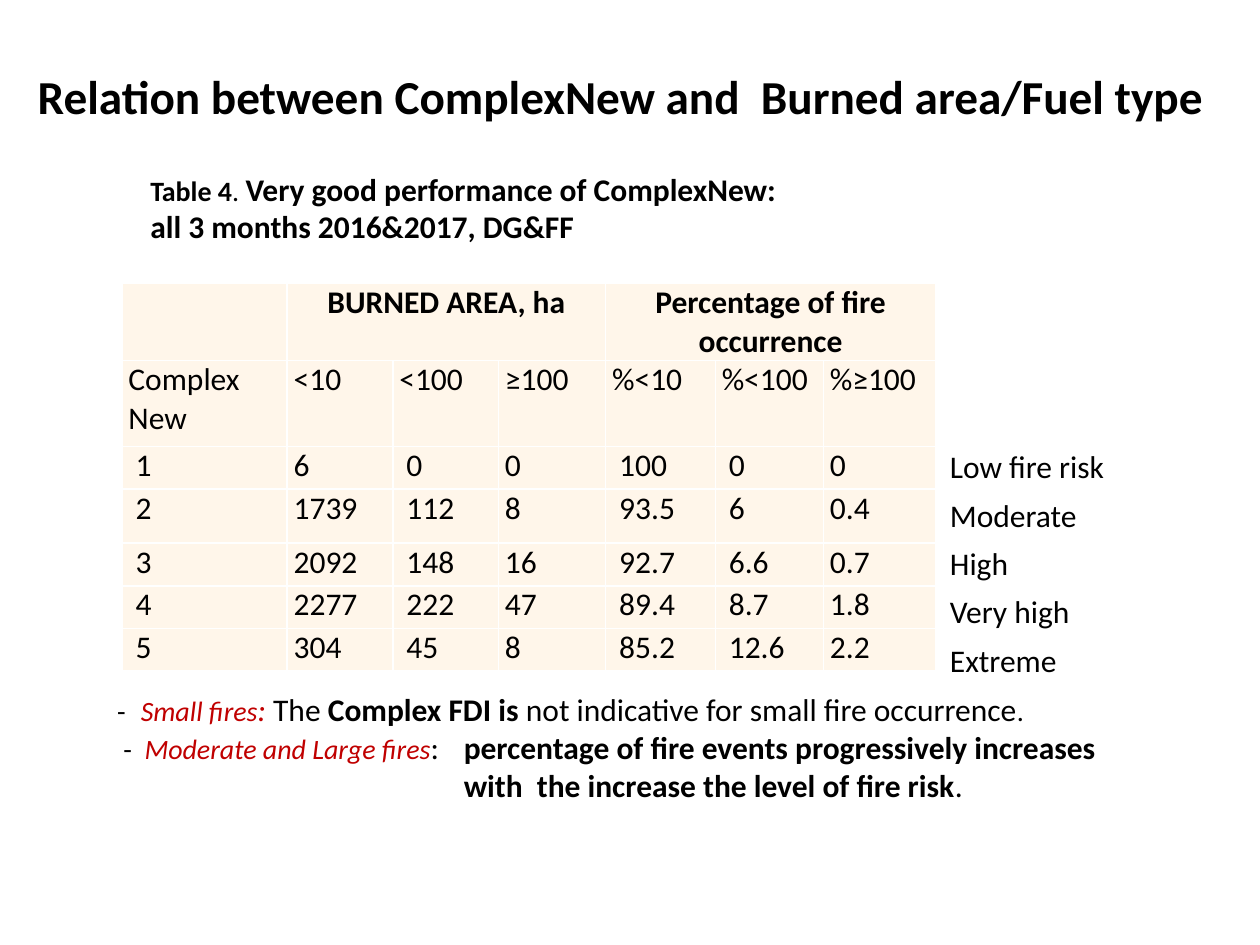
from dataclasses import dataclass

from lxml.etree import SubElement
from pptx import Presentation
from pptx.dml.color import RGBColor
from pptx.enum.text import MSO_ANCHOR, MSO_AUTO_SIZE, PP_ALIGN
from pptx.oxml.ns import qn
from pptx.slide import Slide
from pptx.table import _Cell
from pptx.text.text import TextFrame
from pptx.util import Cm, Pt

BLACK = RGBColor(0x00, 0x00, 0x00)
RED = RGBColor(0xC0, 0x00, 0x00)
CREAM = RGBColor(0xFF, 0xF6, 0xEA)
WHITE = RGBColor(0xFF, 0xFF, 0xFF)
FONT = "Calibri"


@dataclass(frozen=True)
class TextRun:
    text: str
    size: float = 18
    bold: bool = False
    italic: bool = False
    color: RGBColor = BLACK


@dataclass(frozen=True)
class TextLine:
    runs: tuple[TextRun, ...]
    align: PP_ALIGN = PP_ALIGN.LEFT
    space_after: float = 0
    hanging: float = 0


@dataclass(frozen=True)
class TextBox:
    left: float
    top: float
    width: float
    height: float
    lines: tuple[TextLine, ...]
    anchor: MSO_ANCHOR = MSO_ANCHOR.TOP
    margins: tuple[float, float] = (0.25, 0.13)
    wrap: bool = True
    grow: bool = True


TITLE = TextBox(
    0.3, 0.33, 24.41, 3.18,
    (TextLine((TextRun("Relation between ComplexNew and  Burned area/Fuel type", 27, True),),
              PP_ALIGN.CENTER),),
    anchor=MSO_ANCHOR.MIDDLE, grow=False,
)
CAPTION = TextBox(
    2.87, 3.33, 13.56, 1.7,
    (
        TextLine((
            TextRun("Table 4", 16, True),
            TextRun(". ", 16),
            TextRun("Very good performance of ComplexNew:", bold=True),
        )),
        TextLine((TextRun("all 3 months 2016&2017, DG&FF", bold=True),)),
    ),
    anchor=MSO_ANCHOR.MIDDLE, margins=(0.16, 0.08),
)
RISK_LEVELS = TextBox(
    18.9, 8.89, 3.66, 4.95,
    tuple(TextLine((TextRun(level),), space_after=6)
          for level in ("Low fire risk", "Moderate", "High", "Very high", "Extreme")),
    wrap=False,
)
CONCLUSIONS = TextBox(
    2.11, 13.79, 21.41, 3.25,
    (
        TextLine((
            TextRun("-\t", 16),
            TextRun("Small fires", 16, italic=True, color=RED),
            TextRun(": ", italic=True, color=RED),
            TextRun("The "),
            TextRun("Complex FDI is ", bold=True),
            TextRun("not indicative for small fire occurrence"),
            TextRun(".", 16),
        ), hanging=0.48),
        TextLine((
            TextRun(" -  ", 16),
            TextRun("Moderate and Large fires", 16, italic=True, color=RED),
            TextRun(":\t"),
            TextRun("percentage of fire events progressively increases "
                    "with  the increase the level of fire risk", bold=True),
            TextRun("."),
        ), hanging=6.99),
    ),
)

COLUMN_WIDTHS = (3.33, 2.13, 2.13, 2.16, 2.21, 2.18, 2.26)
ROW_HEIGHTS = (1.4, 1.73, 0.86, 1.09, 0.86, 0.86, 0.86)
GROUP_HEADINGS = {1: "BURNED AREA, ha", 4: "Percentage of fire occurrence"}
GROUP_SPAN = 3
BODY_ROWS = (
    ("Complex\nNew", "<10", "<100", "≥100", "%<10", "%<100", "%≥100"),
    (" 1", "6", " 0", "0", " 100", " 0", "0"),
    (" 2", "1739", " 112", "8", " 93.5", " 6", "0.4"),
    (" 3", "2092", " 148", "16", " 92.7", " 6.6", "0.7"),
    (" 4", "2277", " 222", "47", " 89.4", " 8.7", "1.8"),
    (" 5", "304", " 45", "8", " 85.2", " 12.6", "2.2"),
)


def write_lines(frame: TextFrame, lines: tuple[TextLine, ...]) -> None:
    for index, line in enumerate(lines):
        paragraph = frame.add_paragraph() if index else frame.paragraphs[0]
        paragraph.alignment = line.align
        paragraph.space_after = Pt(line.space_after)
        if line.hanging:
            properties = paragraph._p.get_or_add_pPr()
            properties.set("marL", str(Cm(line.hanging)))
            properties.set("indent", str(-Cm(line.hanging)))
        for item in line.runs:
            run = paragraph.add_run()
            run.text = item.text
            run.font.name = FONT
            run.font.size = Pt(item.size)
            run.font.bold = item.bold
            run.font.italic = item.italic
            run.font.color.rgb = item.color


def add_text_box(slide: Slide, box: TextBox) -> None:
    shape = slide.shapes.add_textbox(Cm(box.left), Cm(box.top), Cm(box.width), Cm(box.height))
    frame = shape.text_frame
    frame.word_wrap = box.wrap
    frame.auto_size = MSO_AUTO_SIZE.SHAPE_TO_FIT_TEXT if box.grow else MSO_AUTO_SIZE.NONE
    frame.vertical_anchor = box.anchor
    horizontal, vertical = box.margins
    frame.margin_left = frame.margin_right = Cm(horizontal)
    frame.margin_top = frame.margin_bottom = Cm(vertical)
    write_lines(frame, box.lines)


def style_cell(cell: _Cell) -> None:
    cell.margin_left = cell.margin_right = Cm(0.13)
    cell.margin_top = cell.margin_bottom = 0
    properties = cell._tc.get_or_add_tcPr()
    for side in ("a:lnL", "a:lnR", "a:lnT", "a:lnB"):
        border = SubElement(properties, qn(side), w=str(Pt(1)))
        fill = SubElement(border, qn("a:solidFill"))
        SubElement(fill, qn("a:srgbClr"), val=str(WHITE))
    cell.fill.solid()
    cell.fill.fore_color.rgb = CREAM


def add_fire_table(slide: Slide) -> None:
    table = slide.shapes.add_table(
        len(ROW_HEIGHTS), len(COLUMN_WIDTHS), Cm(2.46), Cm(5.72),
        Cm(sum(COLUMN_WIDTHS)), Cm(sum(ROW_HEIGHTS)),
    ).table
    table.first_row = table.horz_banding = False
    for column, width in zip(table.columns, COLUMN_WIDTHS):
        column.width = Cm(width)
    for row, height in zip(table.rows, ROW_HEIGHTS):
        row.height = Cm(height)
    for cell in table.iter_cells():
        style_cell(cell)
    for start, heading in GROUP_HEADINGS.items():
        cell = table.cell(0, start)
        cell.merge(table.cell(0, start + GROUP_SPAN - 1))
        write_lines(cell.text_frame,
                    (TextLine((TextRun(heading, bold=True),), PP_ALIGN.CENTER),))
    for row_index, values in enumerate(BODY_ROWS, start=1):
        for column_index, value in enumerate(values):
            lines = tuple(TextLine((TextRun(part),)) for part in value.split("\n"))
            write_lines(table.cell(row_index, column_index).text_frame, lines)


def main() -> None:
    presentation = Presentation()
    presentation.slide_width = Cm(25.4)
    presentation.slide_height = Cm(19.05)
    slide = presentation.slides.add_slide(presentation.slide_layouts[6])
    add_fire_table(slide)
    for box in (CAPTION, TITLE, RISK_LEVELS, CONCLUSIONS):
        add_text_box(slide, box)
    presentation.save("out.pptx")


if __name__ == "__main__":
    main()
